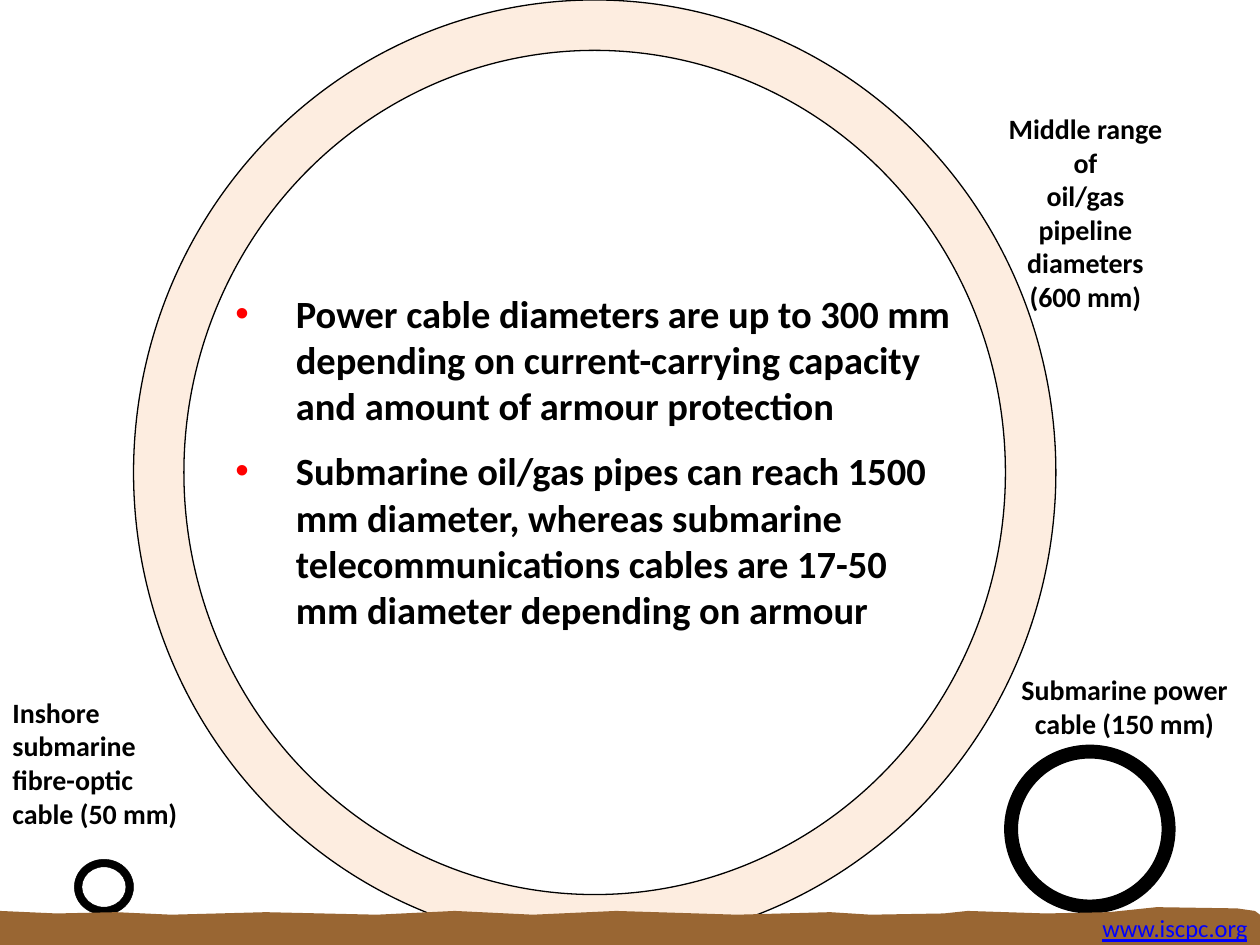
from lxml import etree
from pptx import Presentation
from pptx.dml.color import RGBColor
from pptx.enum.shapes import MSO_SHAPE
from pptx.enum.text import MSO_ANCHOR, PP_ALIGN
from pptx.oxml.ns import qn
from pptx.util import Inches, Pt

COLORS = {"black": "000000", "pipe": "FAC090", "seabed": "996633",
          "bullet": "FF0000", "link": "0000FF"}


def rgb(name):
    return RGBColor.from_string(COLORS[name])


class SlideBuilder:
    font = "Calibri"

    def __init__(self, slide):
        self.slide = slide

    def paint(self, sp, fill, line_width=None, opacity=None):
        sp.shadow.inherit = False
        sp.fill.solid()
        sp.fill.fore_color.rgb = rgb(fill)
        if opacity is not None:
            color = sp.fill._xPr.find(qn("a:solidFill"))[0]
            etree.SubElement(color, qn("a:alpha"), val=str(opacity * 1000))
        if line_width is None:
            sp.line.fill.background()
        else:
            sp.line.color.rgb = rgb("black")
            sp.line.width = Pt(line_width)

    def ring(self, x, y, w, h, wall, fill, line_width, opacity=None):
        sp = self.slide.shapes.add_shape(
            MSO_SHAPE.DONUT, Inches(x), Inches(y), Inches(w), Inches(h))
        sp.adjustments[0] = wall / min(w, h)
        self.paint(sp, fill, line_width, opacity)

    def outline(self, points, fill):
        pts = [(Inches(x), Inches(y)) for x, y in points]
        fb = self.slide.shapes.build_freeform(*pts[0])
        fb.add_line_segments(pts[1:], close=True)
        self.paint(fb.convert_to_shape(), fill)

    def text(self, x, y, w, h, lines, size=16, color="black", bold=True,
             underline=None, align=PP_ALIGN.LEFT, anchor=MSO_ANCHOR.TOP,
             wrap=True, bullets=False):
        box = self.slide.shapes.add_textbox(
            Inches(x), Inches(y), Inches(w), Inches(h))
        tf = box.text_frame
        tf.word_wrap = wrap
        tf.vertical_anchor = anchor
        for i, line in enumerate(lines):
            p = tf.paragraphs[0] if i == 0 else tf.add_paragraph()
            p.alignment = align
            if bullets:
                self.bullet(p)
                if i:
                    p.space_before = Pt(size / 2)
            r = p.add_run()
            r.text = line
            r.font.name = self.font
            r.font.size = Pt(size)
            r.font.bold = bold
            r.font.underline = underline
            r.font.color.rgb = rgb(color)

    def bullet(self, p):
        pPr = p._p.get_or_add_pPr()
        indent = Inches(0.48)
        pPr.set("marL", str(indent))
        pPr.set("indent", str(-indent))
        color = etree.SubElement(pPr, qn("a:buClr"))
        etree.SubElement(color, qn("a:srgbClr"), val=COLORS["bullet"])
        etree.SubElement(pPr, qn("a:buFont"), typeface="Arial")
        etree.SubElement(pPr, qn("a:buChar"), char="•")


def main():
    prs = Presentation()
    prs.slide_width, prs.slide_height = Inches(10), Inches(7.5)
    s = SlideBuilder(prs.slides.add_slide(prs.slide_layouts[6]))

    # Cable labels
    s.text(0, 5.47, 1.61, 1.18,
           ["Inshore", "submarine", "fibre-optic", "cable (50 mm)"])
    s.text(7.85, 5.29, 2.15, 0.64, ["Submarine power cable (150 mm)"],
           align=PP_ALIGN.CENTER)

    # Pipeline cross-section and its label
    s.ring(1.06, 0, 7.32, 7.5, 0.4, "pipe", 0.75, opacity=27)
    s.text(7.83, 1.23, 1.57, 0.91,
           ["Middle range of", "oil/gas pipeline", "diameters", "(600 mm)"],
           align=PP_ALIGN.CENTER, anchor=MSO_ANCHOR.MIDDLE, wrap=False)

    # Main points
    s.text(1.77, 2.25, 5.91, 2.88, [
        "Power cable diameters are up to 300 mm depending on "
        "current-carrying capacity and amount of armour protection",
        "Submarine oil/gas pipes can reach 1500 mm diameter, whereas "
        "submarine telecommunications cables are 17-50 mm diameter "
        "depending on armour",
    ], size=22, bullets=True)

    # Power cable and fibre-optic cable cross-sections
    s.ring(7.98, 5.92, 1.34, 1.32, 0.09, "black", 1.5)
    s.ring(0.59, 6.82, 0.47, 0.44, 0.06, "black", 0.25)

    # Seabed with an uneven surface
    surface = [(0, 7.23), (0.45, 7.25), (0.92, 7.24), (1.36, 7.26),
               (2.11, 7.24), (2.99, 7.26), (3.61, 7.23), (4.23, 7.26),
               (4.89, 7.23), (5.85, 7.26), (6.59, 7.24), (6.91, 7.26),
               (7.49, 7.25), (7.68, 7.23), (8.3, 7.25), (8.8, 7.24),
               (9.18, 7.2), (9.82, 7.21), (9.96, 7.23), (10, 7.26)]
    s.outline(surface + [(10, 7.5), (0, 7.5)], "seabed")

    # Web address
    s.text(8.65, 7.2, 1.36, 0.3, ["www.iscpc.org"], size=14, color="link",
           bold=False, underline=True, wrap=False)

    prs.save("out.pptx")


if __name__ == "__main__":
    main()
